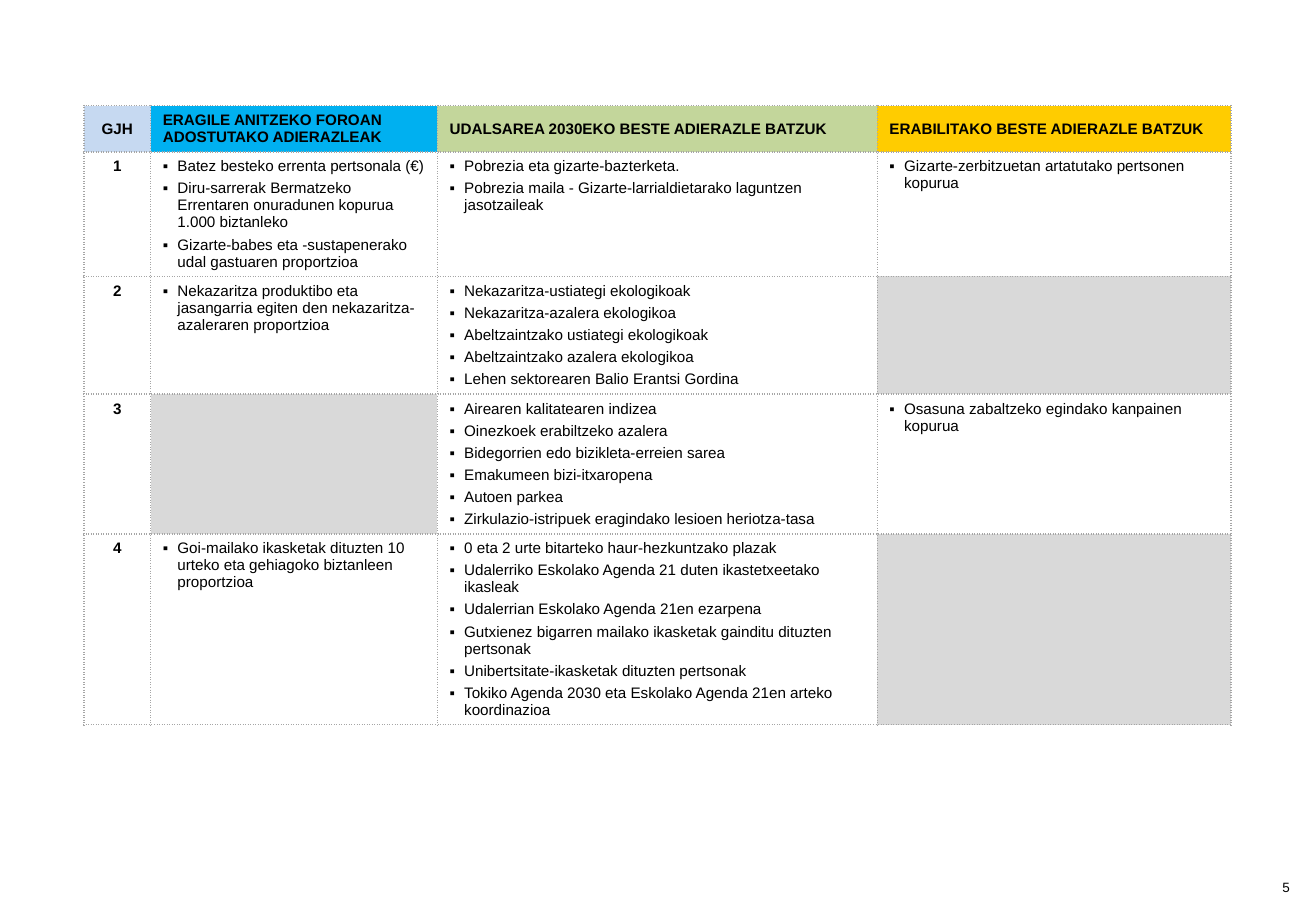
from lxml import etree
from pptx import Presentation
from pptx.dml.color import RGBColor
from pptx.enum.text import MSO_ANCHOR, PP_ALIGN
from pptx.oxml.ns import qn
from pptx.util import Inches, Pt

CENTER, LEFT = PP_ALIGN.CENTER, PP_ALIGN.LEFT
MIDDLE, TOP = MSO_ANCHOR.MIDDLE, MSO_ANCHOR.TOP

COLORS = {
    "text": "000000", "border": "A6A6A6", "empty": "D9D9D9",
    "goal": "C6D9F1", "forum": "00B0F0", "network": "C3D69B", "other": "FFCC00",
}
COLS = [0.55, 2.36, 3.62, 2.91]
ROWS = [0.38, 1.02, 0.97, 1.15, 1.57]
HEADS = [
    ("GJH", "goal"),
    ("ERAGILE ANITZEKO FOROAN ADOSTUTAKO ADIERAZLEAK", "forum"),
    ("UDALSAREA 2030EKO BESTE ADIERAZLE BATZUK", "network"),
    ("ERABILITAKO BESTE ADIERAZLE BATZUK", "other"),
]
GOALS = [
    [
        ["Batez besteko errenta pertsonala (€)",
         "Diru-sarrerak Bermatzeko Errentaren onuradunen kopurua 1.000 biztanleko",
         "Gizarte-babes eta -sustapenerako udal gastuaren proportzioa"],
        ["Pobrezia eta gizarte-bazterketa.",
         "Pobrezia maila - Gizarte-larrialdietarako laguntzen jasotzaileak"],
        ["Gizarte-zerbitzuetan artatutako pertsonen kopurua"],
    ],
    [
        ["Nekazaritza produktibo eta jasangarria egiten den "
         "nekazaritza-azaleraren proportzioa"],
        ["Nekazaritza-ustiategi ekologikoak",
         "Nekazaritza-azalera ekologikoa",
         "Abeltzaintzako ustiategi ekologikoak",
         "Abeltzaintzako azalera ekologikoa",
         "Lehen sektorearen Balio Erantsi Gordina"],
        [],
    ],
    [
        [],
        ["Airearen kalitatearen indizea",
         "Oinezkoek erabiltzeko azalera",
         "Bidegorrien edo bizikleta-erreien sarea",
         "Emakumeen bizi-itxaropena",
         "Autoen parkea",
         "Zirkulazio-istripuek eragindako lesioen heriotza-tasa"],
        ["Osasuna zabaltzeko egindako kanpainen kopurua"],
    ],
    [
        ["Goi-mailako ikasketak dituzten 10 urteko eta gehiagoko "
         "biztanleen proportzioa"],
        ["0 eta 2 urte bitarteko haur-hezkuntzako plazak",
         "Udalerriko Eskolako Agenda 21 duten ikastetxeetako ikasleak",
         "Udalerrian Eskolako Agenda 21en ezarpena",
         "Gutxienez bigarren mailako ikasketak gainditu dituzten pertsonak",
         "Unibertsitate-ikasketak dituzten pertsonak",
         "Tokiko Agenda 2030 eta Eskolako Agenda 21en arteko koordinazioa"],
        [],
    ],
]


def write(frame, lines, size, bold=False, align=LEFT, bullet=False):
    """Fill a text frame with one paragraph per line."""
    for i, line in enumerate(lines):
        para = frame.add_paragraph() if i else frame.paragraphs[0]
        para.alignment = align
        run = para.add_run()
        run.text = line
        for name, value in {"name": "Arial", "size": Pt(size), "bold": bold}.items():
            setattr(run.font, name, value)
        run.font.color.rgb = RGBColor.from_string(COLORS["text"])
        if bullet:
            para.space_after = Pt(3)
            props = para._p.get_or_add_pPr()
            props.set("marL", str(Inches(0.12)))
            props.set("indent", str(Inches(-0.12)))
            tint = etree.SubElement(props, qn("a:buClr"))
            etree.SubElement(tint, qn("a:srgbClr"), val=COLORS["text"])
            etree.SubElement(props, qn("a:buFont"), typeface="Arial")
            etree.SubElement(props, qn("a:buChar"), char="▪")


def style(cell, fill, anchor):
    """Give a cell dotted borders, a fill (or none) and an anchor."""
    props = cell._tc.get_or_add_tcPr()
    for side in ("lnL", "lnR", "lnT", "lnB"):
        line = etree.SubElement(props, qn(f"a:{side}"), w=str(Pt(0.96)))
        solid = etree.SubElement(line, qn("a:solidFill"))
        etree.SubElement(solid, qn("a:srgbClr"), val=COLORS["border"])
        etree.SubElement(line, qn("a:prstDash"), val="dot")
    if fill:
        cell.fill.solid()
        cell.fill.fore_color.rgb = RGBColor.from_string(COLORS[fill])
    else:
        cell.fill.background()
    cell.vertical_anchor = anchor


deck = Presentation()
deck.slide_width, deck.slide_height = Inches(10.83), Inches(7.5)
slide = deck.slides.add_slide(deck.slide_layouts[6])

# Indicator table
table = slide.shapes.add_table(
    len(ROWS), len(COLS), Inches(0.69), Inches(0.87),
    Inches(sum(COLS)), Inches(sum(ROWS))).table
table.horz_banding = False
for col, width in zip(table.columns, COLS):
    col.width = Inches(width)
for row, height in zip(table.rows, ROWS):
    row.height = Inches(height)

for c, (head, fill) in enumerate(HEADS):
    cell = table.cell(0, c)
    style(cell, fill, MIDDLE)
    write(cell.text_frame, [head], 9, True, LEFT if c else CENTER)

for r, goal in enumerate(GOALS, 1):
    cell = table.cell(r, 0)
    style(cell, None, TOP)
    write(cell.text_frame, [str(r)], 9, True, CENTER)
    for c, items in enumerate(goal, 1):
        cell = table.cell(r, c)
        style(cell, None if items else "empty", TOP)
        write(cell.text_frame, items, 9, bullet=True)

# Page number
page = slide.shapes.add_textbox(
    Inches(10.35), Inches(7.21), Inches(0.47), Inches(0.19)).text_frame
page.word_wrap = True
page.vertical_anchor = MIDDLE
write(page, ["5"], 8, align=CENTER)

deck.save("out.pptx")
